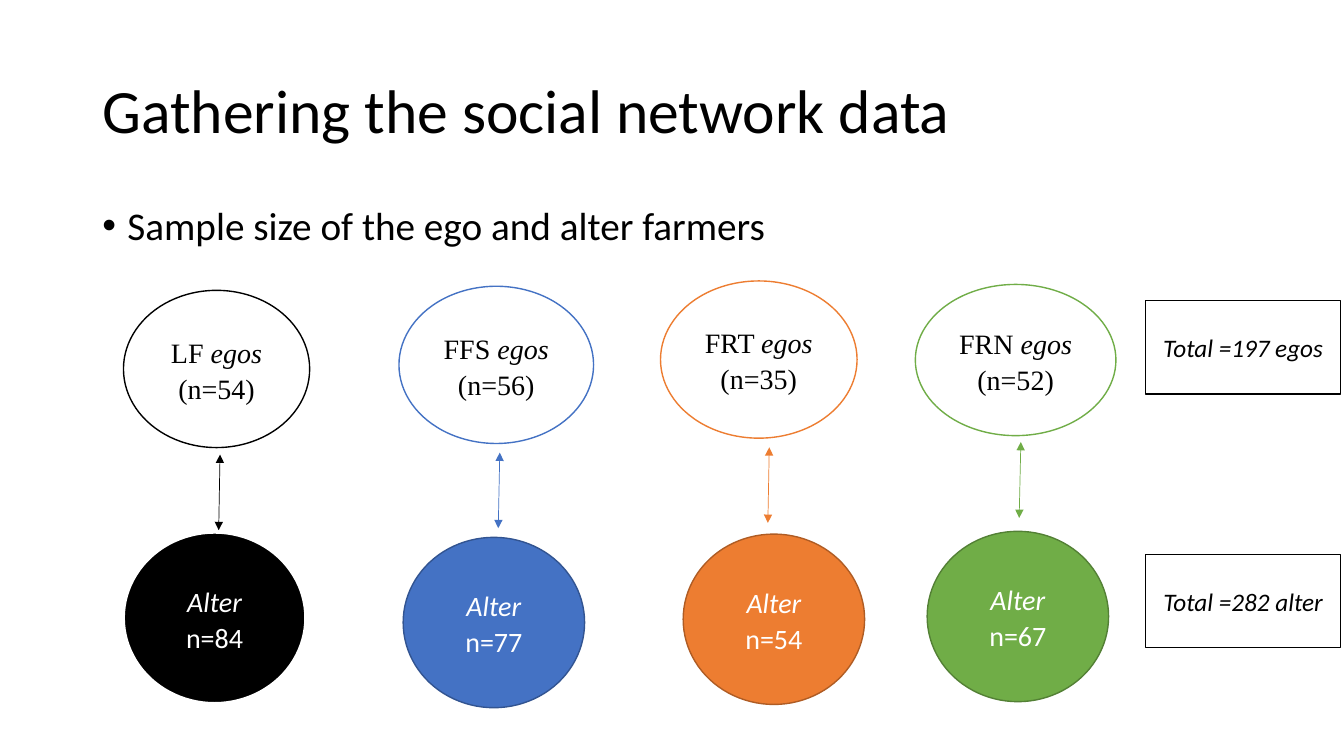
from lxml import etree
from pptx import Presentation
from pptx import util as u
from pptx.dml.color import RGBColor
from pptx.enum import shapes, text
from pptx.oxml.ns import qn

Pt = u.Pt
BLACK = RGBColor(0x00, 0x00, 0x00)
WHITE = RGBColor(0xFF, 0xFF, 0xFF)
BLUE = RGBColor(0x44, 0x72, 0xC4)
DARK_BLUE = RGBColor(0x32, 0x54, 0x91)
ORANGE = RGBColor(0xED, 0x7D, 0x31)
DARK_ORANGE = RGBColor(0xAF, 0x5C, 0x24)
GREEN = RGBColor(0x70, 0xAD, 0x47)
DARK_GREEN = RGBColor(0x53, 0x80, 0x35)


def write(box, spans, font, size, color, align=text.PP_ALIGN.CENTER, spacing=1.0, after=0):
    frame = box.text_frame
    frame.word_wrap = True
    frame.auto_size = text.MSO_AUTO_SIZE.NONE
    frame.vertical_anchor = text.MSO_ANCHOR.MIDDLE
    para = frame.paragraphs[0]
    para.alignment = align
    para.line_spacing = spacing
    para.space_after = Pt(after)
    para.font.name = font
    para.font.size = Pt(size)
    para.font.color.rgb = color
    for words, italic in spans:
        span = para.add_run()
        span.text = words
        if italic:
            span.font.italic = True
    return para


def add_box(kind, place, fill, line, width):
    box = page.shapes.add_shape(kind, *[Pt(length) for length in place])
    box.shadow.inherit = False
    box.fill.solid()
    box.fill.fore_color.rgb = fill
    box.line.color.rgb = line
    box.line.width = Pt(width)
    return box


deck = Presentation()
deck.slide_width, deck.slide_height = Pt(960), Pt(540)
page = deck.slides.add_slide(deck.slide_layouts[5])

title = page.shapes.title
title.left, title.top, title.width, title.height = Pt(66), Pt(28.75), Pt(828), Pt(104.4)
write(title, [("Gathering the social network data", False)], "Calibri", 44, BLACK,
      text.PP_ALIGN.LEFT, 0.9)

body = page.shapes.add_textbox(Pt(66), Pt(143.75), Pt(828), Pt(342.6))
bullet = write(body, [("Sample size of the ego and alter farmers", False)], "Calibri", 28, BLACK,
               text.PP_ALIGN.LEFT, 0.9)
body.text_frame.vertical_anchor = text.MSO_ANCHOR.TOP
bullet.space_before = Pt(10)
props = bullet._p.get_or_add_pPr()
props.set("marL", str(Pt(18)))
props.set("indent", str(-Pt(18)))
mark_font = etree.Element(qn("a:buFont"), typeface="Arial")
mark = etree.Element(qn("a:buChar"), char="•")
props.find(qn("a:defRPr")).addprevious(mark_font)
mark_font.addnext(mark)

groups = [
    ("LF", 54, (88.2, 207.4, 133, 112.3), 84, (88.5, 380.5), (156.2, 378.7, 157.2, 324.7),
     BLACK, WHITE, 1.5),
    ("FFS", 56, (285, 204.5, 139, 112.3), 77, (288, 383.8), (355.9, 377.3, 357, 323.3),
     BLUE, DARK_BLUE, 1),
    ("FRT", 35, (471.8, 200.7, 140.4, 112.3), 54, (488, 381.5), (548.5, 373.5, 549.5, 319.5),
     ORANGE, DARK_ORANGE, 1),
    ("FRN", 52, (653.8, 203.2, 143.3, 108), 67, (662.3, 379.5), (728, 370, 729.2, 315.7),
     GREEN, DARK_GREEN, 1),
]
for name, egos, ego_place, alters, alter_corner, ends, color, edge, edge_width in groups:
    ego = add_box(shapes.MSO_SHAPE.OVAL, ego_place, WHITE, color, 1)
    write(ego, [(name + " ", False), ("egos", True), (f" (n={egos})", False)],
          "Times New Roman", 20, BLACK, spacing=1.07, after=8)

    alter = add_box(shapes.MSO_SHAPE.OVAL, alter_corner + (129.6, 121.7), color, edge, edge_width)
    write(alter, [("Alter", True), (f" n={alters}", False)],
          "Calibri", 20, WHITE, spacing=1.07, after=8)

    arrow = page.shapes.add_connector(shapes.MSO_CONNECTOR.STRAIGHT, *[Pt(end) for end in ends])
    arrow.line.color.rgb = color
    arrow.line.width = Pt(0.5)
    for tip in ("a:headEnd", "a:tailEnd"):
        etree.SubElement(arrow.line._get_or_add_ln(), qn(tip), type="triangle")
    etree.SubElement(arrow._element.spPr, qn("a:effectLst"))

for words, top in (("Total =197 egos", 214.7), ("Total =282 alter", 396)):
    total = add_box(shapes.MSO_SHAPE.RECTANGLE, (818.4, top, 139.3, 66.7), WHITE, BLACK, 1)
    write(total, [(words, True)], "Calibri", 18, BLACK)

deck.save("out.pptx")
